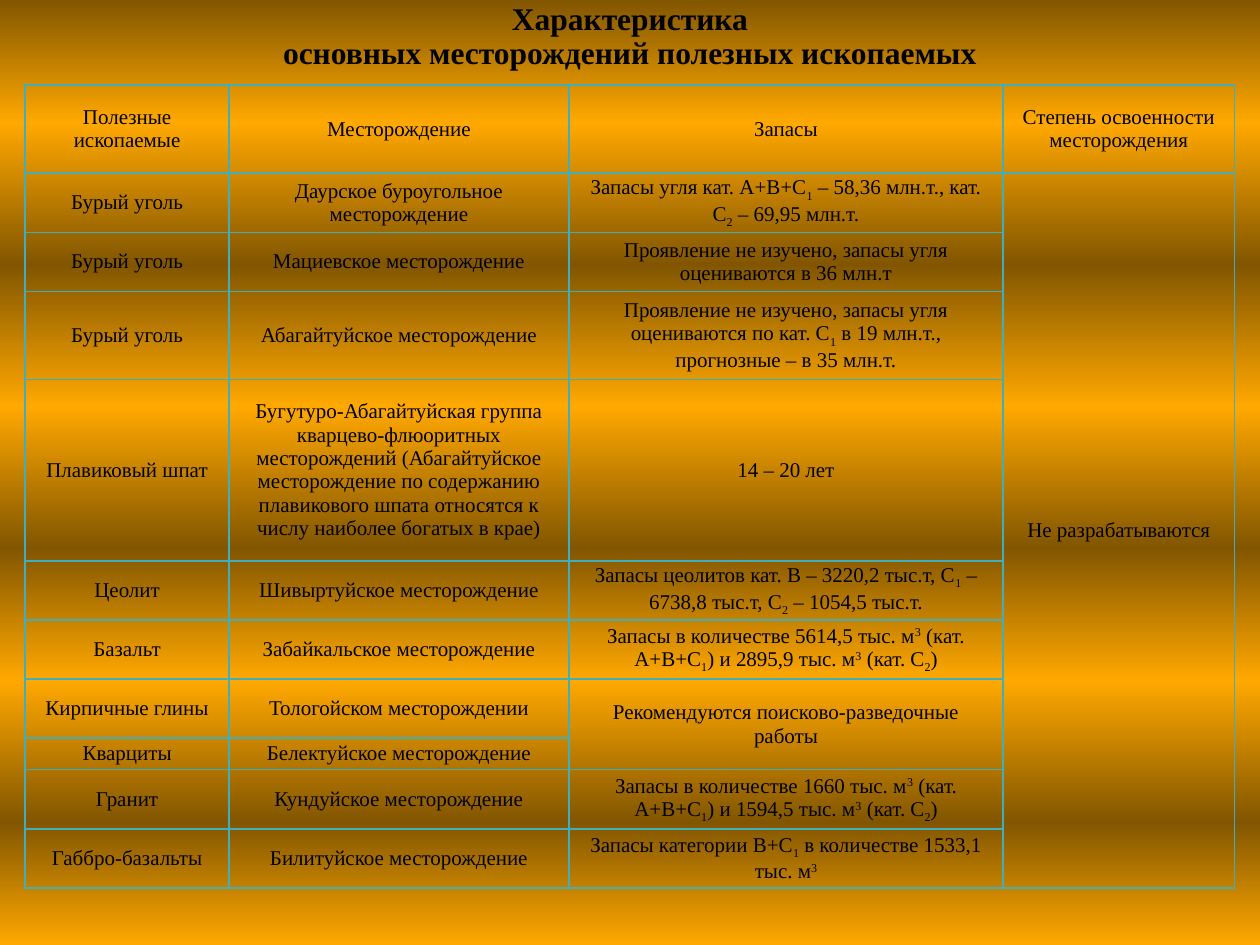
"""Build a slide tabulating the main mineral deposits."""
from dataclasses import dataclass

from lxml import etree
from pptx import Presentation
from pptx import util as u
from pptx.dml.color import RGBColor
from pptx.enum import text
from pptx.oxml import ns

BLACK = RGBColor(0x00, 0x00, 0x00)
TEAL = RGBColor(0x41, 0xAE, 0xBD)
BROWN = RGBColor(0x82, 0x56, 0x00)
AMBER = RGBColor(0xFF, 0xA8, 0x00)

FONT = "Times New Roman"
WIDTH, HEIGHT = u.Inches(10), u.Inches(7.5)
STOPS = (0, 13, 28, 43, 58, 72, 87, 100)
BASELINES = {"1": -25000, "2": -25000, "3": 30000}
COLUMNS = (1.62, 2.7, 3.45, 1.84)
TITLE = "Характеристика\vосновных месторождений полезных ископаемых"
HEADINGS = ("Полезные ископаемые", "Месторождение", "Запасы",
            "Степень освоенности месторождения")


@dataclass(frozen=True)
class Area:
    """A rectangle in shares of the slide's size."""
    left: float
    top: float
    width: float
    height: float

    def emu(self) -> tuple[int, int, int, int]:
        """Return left, top, width and height in EMU."""
        return (round(self.left * WIDTH), round(self.top * HEIGHT),
                round(self.width * WIDTH), round(self.height * HEIGHT))


@dataclass(frozen=True)
class Deposit:
    """A table row; bars in reserves enclose raised or lowered digits."""
    mineral: str
    name: str
    reserves: str = ""
    weight: float = 0.47


@dataclass(frozen=True)
class Merge:
    """A column and the rows that it joins."""
    column: int
    first: int
    last: int


TITLE_AREA = Area(0, 0, 1, 0.08)
TABLE_AREA = Area(0.02, 0.09, 0.96, 0.85)
HEADING_WEIGHT = 0.7
DEPOSITS = (
    Deposit("Бурый уголь", "Даурское буроугольное месторождение",
            "Запасы угля кат. А+В+С|1| – 58,36 млн.т., кат. С|2| – 69,95 млн.т."),
    Deposit("Бурый уголь", "Мациевское месторождение",
            "Проявление не изучено, запасы угля оцениваются в 36 млн.т"),
    Deposit("Бурый уголь", "Абагайтуйское месторождение",
            "Проявление не изучено, запасы угля оцениваются по кат. С|1| "
            "в 19 млн.т., прогнозные – в 35 млн.т.", 0.7),
    Deposit("Плавиковый шпат",
            "Бугутуро-Абагайтуйская группа кварцево-флюоритных месторождений "
            "(Абагайтуйское месторождение по содержанию плавикового шпата "
            "относятся к числу наиболее богатых в крае)", "14 – 20 лет", 1.44),
    Deposit("Цеолит", "Шивыртуйское месторождение",
            "Запасы цеолитов кат. В – 3220,2 тыс.т, С|1| – 6738,8 тыс.т, "
            "С|2| – 1054,5 тыс.т."),
    Deposit("Базальт", "Забайкальское месторождение",
            "Запасы в количестве 5614,5 тыс. м|3| (кат. А+В+С|1|) "
            "и 2895,9 тыс. м|3| (кат. С|2|)"),
    Deposit("Кирпичные глины", "Тологойском месторождении",
            "Рекомендуются поисково-разведочные работы"),
    Deposit("Кварциты", "Белектуйское месторождение", weight=0.25),
    Deposit("Гранит", "Кундуйское месторождение",
            "Запасы в количестве 1660 тыс. м|3| (кат. А+В+С|1|) "
            "и 1594,5 тыс. м|3| (кат. С|2|)"),
    Deposit("Габбро-базальты", "Билитуйское месторождение",
            "Запасы категории В+С|1| в количестве 1533,1 тыс. м|3|"),
)
MERGES = (Merge(3, 1, 10), Merge(2, 7, 8))


def write(frame, words: str, *, size: float, bold: bool = False,
          spacing: float = 1.0) -> None:
    """Write centred words into a text frame, shifting the digits between bars."""
    frame.word_wrap = True
    para = frame.paragraphs[0]
    para.alignment = text.PP_ALIGN.CENTER
    para.line_spacing = spacing
    for index, piece in enumerate(words.split("|")):
        if not piece:
            continue
        for part, line in enumerate(piece.split("\v")):
            if part:
                para.add_line_break()
            span = para.add_run()
            span.text = line
            span.font.name = FONT
            span.font.size = u.Pt(size)
            span.font.bold = bold
            span.font.color.rgb = BLACK
            if index % 2:
                span.font._element.set("baseline", str(BASELINES[piece]))


def paint_background(page) -> None:
    """Fill the page with alternating brown and amber bands."""
    fill = page.background.fill
    fill.gradient()
    fill.gradient_angle = 270
    stops = page.element.find(".//" + ns.qn("a:gsLst"))
    for stop in list(stops):
        stops.remove(stop)
    for index, share in enumerate(STOPS):
        stop = etree.SubElement(stops, ns.qn("a:gs"), pos=str(share * 1000))
        colour = AMBER if index % 2 else BROWN
        etree.SubElement(stop, ns.qn("a:srgbClr"), val=str(colour))


def add_title(page) -> None:
    """Add the heading above the table."""
    box = page.shapes.add_textbox(*TITLE_AREA.emu())
    box.text_frame.vertical_anchor = text.MSO_ANCHOR.MIDDLE
    write(box.text_frame, TITLE, size=18, bold=True, spacing=0.9)


def format_cell(cell) -> None:
    """Give a cell its margins, thin borders and clear fill."""
    cell.margin_left = cell.margin_right = u.Inches(0.08)
    cell.margin_top = cell.margin_bottom = 0
    cell.vertical_anchor = text.MSO_ANCHOR.MIDDLE
    properties = cell._tc.get_or_add_tcPr()
    for side in "LRTB":
        line = etree.SubElement(properties, ns.qn(f"a:ln{side}"), w=str(u.Pt(1)))
        fill = etree.SubElement(line, ns.qn("a:solidFill"))
        etree.SubElement(fill, ns.qn("a:srgbClr"), val=str(TEAL))
    cell.fill.background()


def share_out(items, weights, total: int, attribute: str) -> None:
    """Divide a total length among columns or rows by weight."""
    for item, weight in zip(items, weights):
        setattr(item, attribute, round(total * weight / sum(weights)))


def add_deposits(page) -> None:
    """Add the table of deposits with its merged cells."""
    rows = [HEADINGS] + [(d.mineral, d.name, d.reserves, "") for d in DEPOSITS]
    rows[1] = rows[1][:3] + ("Не разрабатываются",)
    weights = [HEADING_WEIGHT] + [d.weight for d in DEPOSITS]
    area = TABLE_AREA.emu()
    table = page.shapes.add_table(len(rows), len(COLUMNS), *area).table
    table.first_row = table.horz_banding = False
    share_out(table.columns, COLUMNS, area[2], "width")
    share_out(table.rows, weights, area[3], "height")
    for row, entries in enumerate(rows):
        for column, words in enumerate(entries):
            cell = table.cell(row, column)
            format_cell(cell)
            write(cell.text_frame, words, size=12)
    for merge in MERGES:
        table.cell(merge.first, merge.column).merge(
            table.cell(merge.last, merge.column))


def main() -> None:
    """Build and save the deck."""
    deck = Presentation()
    deck.slide_width, deck.slide_height = WIDTH, HEIGHT
    page = deck.slides.add_slide(deck.slide_layouts[6])
    paint_background(page)
    add_title(page)
    add_deposits(page)
    deck.save("out.pptx")


if __name__ == "__main__":
    main()
